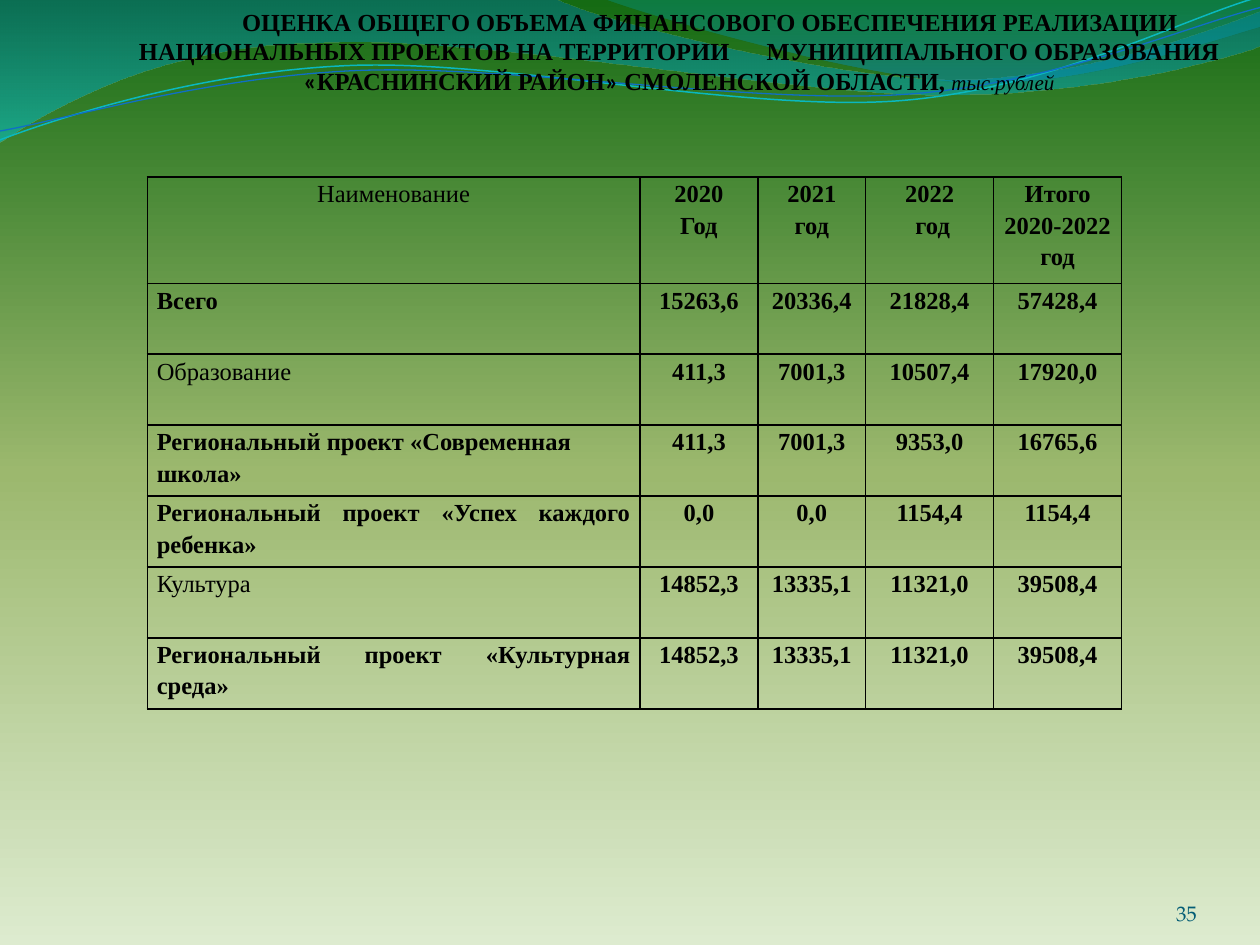
from math import cos, radians, sin

from lxml import etree
from pptx import Presentation
from pptx.dml.color import RGBColor as Rgb
from pptx.enum.text import MSO_ANCHOR as Anchor, MSO_AUTO_SIZE as Auto, PP_ALIGN as Align
from pptx.oxml import parse_xml
from pptx.oxml.ns import nsdecls, qn
from pptx.util import Cm, Pt

SERIF = "Times New Roman"
INCH = 2.54
TILT = -2.7
PIVOT = (4.99, .58)

# Wave outlines in inches: a start, then points (2 numbers) or curves (6 numbers)
BANDS = [
    ([(0, -.01), (4.4, -.01), (4.76, .17, 6.64, .63, 7.58, .63),
      (8.53, .63, 9.58, .26, 10, .09), (10.01, .36),
      (9.83, .44, 8.7, .76, 7.46, .75), (6.22, .75, 3.82, .28, 2.57, .34),
      (1.29, .35, .46, .83, -.01, 1.13), (0, -.01)],
     [(0, "0074A1", 45), (100, "00C6CF", 55)]),
    ([(4.79, -.01), (5.09, .11, 6.82, .62, 7.69, .65),
      (8.56, .69, 9.61, .32, 10, .21), (10, 0), (4.79, -.01)],
     [(0, "00A1A9", 30), (80, "008BBF", 45)]),
]
LINES = [
    ([(0, 1.11), (.48, .93, 1.58, .57, 2.77, .52), (3.95, .47, 5.93, .89, 7.13, .8),
      (8.33, .71, 9.38, .15, 9.98, -.02)], "0AB8BF", .85),
    ([(0, 1.04), (.47, .96, 1.64, .61, 2.83, .56), (4.03, .51, 5.97, .83, 7.17, .75),
      (8.36, .67, 9.41, .21, 10, .06)], "0F6FC6", .75),
]

HEAD = ["Наименование", "2020\nГод", "2021 год", "2022\n год", "Итого 2020-2022 год"]
ROWS = [
    ["Всего", "15263,6", "20336,4", "21828,4", "57428,4"],
    ["Образование", "411,3", "7001,3", "10507,4", "17920,0"],
    ["Региональный проект «Современная школа»", "411,3", "7001,3", "9353,0", "16765,6"],
    ["Региональный проект «Успех каждого ребенка»", "0,0", "0,0", "1154,4", "1154,4"],
    ["Культура", "14852,3", "13335,1", "11321,0", "39508,4"],
    ["Региональный проект «Культурная среда»", "14852,3", "13335,1", "11321,0", "39508,4"],
]
PLAIN = {"Наименование", "Образование", "Культура"}
LEFT = {"Региональный проект «Современная школа»"}


def color(code):
    return Rgb.from_string(code)


def write(para, text, font=SERIF, size=14, bold=False, ital=False, ink="000000", gap=0):
    run = para.add_run()
    run.text = text
    face = run.font
    face.name, face.size, face.bold, face.italic = font, Pt(size), bold, ital
    face.color.rgb = color(ink)
    if gap:
        run._r.get_or_add_rPr().set("spc", str(int(gap * 100)))


def inset(frame, side, top):
    frame.margin_left = frame.margin_right = Cm(side)
    frame.margin_top = frame.margin_bottom = Cm(top)


def blend(stops, angle):
    marks = "".join(
        f'<a:gs pos="{pos * 1000}"><a:srgbClr val="{code}">'
        f'<a:alpha val="{alpha * 1000}"/></a:srgbClr></a:gs>'
        for pos, code, alpha in stops)
    return parse_xml(f'<a:gradFill {nsdecls("a")} rotWithShape="1"><a:gsLst>{marks}</a:gsLst>'
                     f'<a:lin ang="{angle * 60000}" scaled="0"/></a:gradFill>')


def backdrop(slide):
    fill = slide.background.fill
    fill.solid()
    fill.fore_color.rgb = color("9CB86E")
    old = slide._element.find(".//" + qn("p:bgPr")).find(qn("a:solidFill"))
    stops = [(0, "DDEBCF", 100), (50, "9CB86E", 100), (100, "156B13", 100)]
    old.getparent().replace(old, blend(stops, 270))


def turn(point, angle):
    x, y = point[0] - PIVOT[0], point[1] - PIVOT[1]
    c, s = cos(radians(angle)), sin(radians(angle))
    return PIVOT[0] + x * c - y * s, PIVOT[1] + x * s + y * c


def draw(slide, box, parts, close=False, angle=0):
    """Lay out all points as a polyline, then join each curve's three points."""
    pairs = [part[i:i + 2] for part in parts for i in range(0, len(part), 2)]
    pts = [(Cm(box[0] + x * INCH), Cm(box[1] + y * INCH))
           for x, y in (turn(pair, -angle) for pair in pairs)]
    pen = slide.shapes.build_freeform(*pts[0])
    pen.add_line_segments(pts[1:], close=close)
    shape = pen.convert_to_shape()
    steps = iter(shape._element.findall(".//" + qn("a:lnTo")))
    for part in parts[1:]:
        first = next(steps)
        if len(part) == 6:
            first.tag = qn("a:cubicBezTo")
            for step in (next(steps), next(steps)):
                first.append(step[0])
                step.getparent().remove(step)
    shape.rotation = angle
    shape.shadow.inherit = False
    shape.fill.background()
    return shape


def waves(slide, box):
    for parts, stops in BANDS:
        shape = draw(slide, box, parts, close=True)
        shape.line.fill.background()
        old = shape._element.spPr.find(qn("a:noFill"))
        old.getparent().replace(old, blend(stops, 90))
    for parts, ink, width in LINES:
        line = draw(slide, box, parts, angle=TILT).line
        line.color.rgb, line.width = color(ink), Pt(width)


def border(cell, ink="000000", width=1):
    props = cell._tc.get_or_add_tcPr()
    for i, side in enumerate(("lnL", "lnR", "lnT", "lnB")):
        line = etree.Element(qn(f"a:{side}"), w=str(Pt(width)))
        fill = etree.SubElement(line, qn("a:solidFill"))
        etree.SubElement(fill, qn("a:srgbClr"), val=ink)
        props.insert(i, line)


def grid(slide, box):
    data = [HEAD] + ROWS
    table = slide.shapes.add_table(len(data), len(HEAD), *map(Cm, box)).table
    table.first_row = table.horz_banding = False
    for col, width in zip(table.columns, (9.93, 2.38, 2.17, 2.58, 2.58)):
        col.width = Cm(width)
    for r, row in enumerate(data):
        table.rows[r].height = Cm(1.43 if r else 2.14)
        for c, text in enumerate(row):
            cell = table.cell(r, c)
            inset(cell, .19, 0)
            cell.fill.background()
            border(cell)
            side = Align.CENTER if c or not r else Align.LEFT if text in LEFT else Align.JUSTIFY
            for i, part in enumerate(text.split("\n")):
                frame = cell.text_frame
                para = frame.add_paragraph() if i else frame.paragraphs[0]
                para.alignment, para.line_spacing = side, 1.15
                write(para, part, bold=text not in PLAIN)


def place(shape, box):
    shape.left, shape.top, shape.width, shape.height = map(Cm, box)


def title(slide, box):
    shape = slide.shapes.title
    place(shape, box)
    slide.shapes._spTree.append(shape._element)  # bring to front
    frame = shape.text_frame
    frame.word_wrap, frame.auto_size = True, Auto.NONE
    frame.vertical_anchor = Anchor.TOP
    inset(frame, .25, .14)
    para = frame.paragraphs[0]
    para.alignment = Align.CENTER
    props = para._p.get_or_add_pPr()
    props.set("marL", "0")
    props.set("indent", str(Cm(1.25)))
    write(para, "ОЦЕНКА ОБЩЕГО ОБЪЕМА ФИНАНСОВОГО ОБЕСПЕЧЕНИЯ РЕАЛИЗАЦИИ "
                "НАЦИОНАЛЬНЫХ ПРОЕКТОВ НА ТЕРРИТОРИИ", bold=True)
    write(para, " ", bold=True, gap=17.5)
    write(para, "МУНИЦИПАЛЬНОГО ОБРАЗОВАНИЯ ", bold=True)
    write(para, "«", font="Calibri", bold=True)
    write(para, "КРАСНИНСКИЙ РАЙОН", bold=True)
    write(para, "»", font="Calibri", bold=True)
    write(para, " СМОЛЕНСКОЙ ОБЛАСТИ, ", bold=True)
    write(para, "тыс.рублей", size=12, ital=True)


def number(slide, box):
    frame = slide.shapes.add_textbox(*map(Cm, box)).text_frame
    frame.word_wrap, frame.vertical_anchor = True, Anchor.BOTTOM
    inset(frame, 0, 0)
    para = frame.paragraphs[0]
    para.alignment = Align.RIGHT
    write(para, "35", font="TeX Gyre Pagella", size=12, ink="045D75")


def main():
    deck = Presentation()
    deck.slide_width, deck.slide_height = Cm(25.4), Cm(19.05)
    slide = deck.slides.add_slide(deck.slide_layouts[5])
    backdrop(slide)
    waves(slide, (0, 0))
    number(slide, (22.02, 17.65, 2.11, 1.02))
    grid(slide, (2.97, 3.57, 19.64, 10.72))
    title(slide, (1.98, 0, 23.42, 3.12))
    deck.save("out.pptx")


if __name__ == "__main__":
    main()
